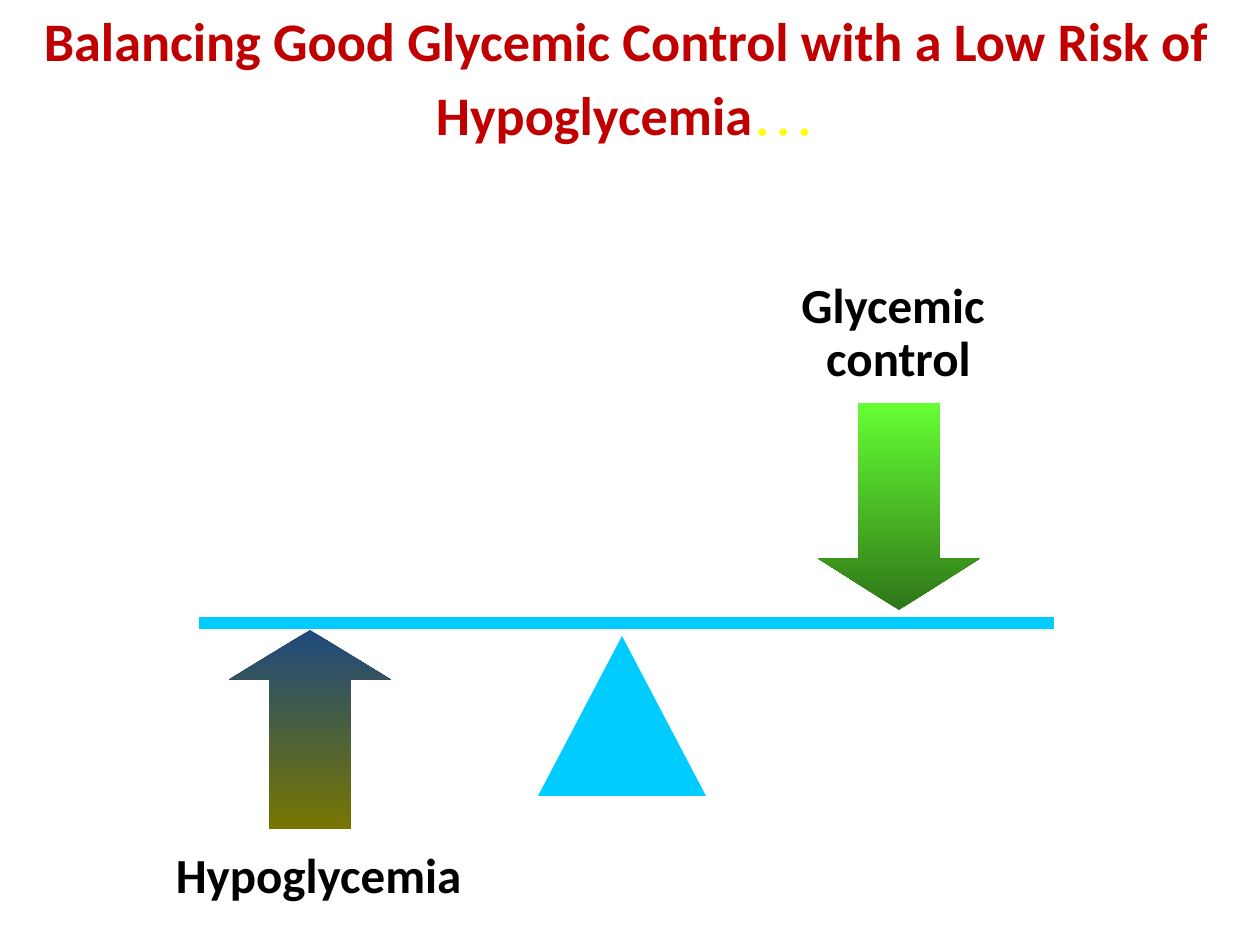
from pptx import Presentation
from pptx.dml.color import RGBColor
from pptx.enum.shapes import MSO_CONNECTOR, MSO_SHAPE
from pptx.enum.text import MSO_ANCHOR, PP_ALIGN
from pptx.oxml.ns import qn
from pptx.util import Pt
from lxml import etree

PX = 914400 // 126
CENTER = PP_ALIGN.CENTER
MIDDLE = MSO_ANCHOR.MIDDLE
UP_ARROW = MSO_SHAPE.UP_ARROW
TRIANGLE = MSO_SHAPE.ISOSCELES_TRIANGLE
STRAIGHT = MSO_CONNECTOR.STRAIGHT

RED = RGBColor(0xC0, 0x00, 0x00)
YELLOW = RGBColor(0xFF, 0xFF, 0x00)
BLACK = RGBColor(0x00, 0x00, 0x00)
CYAN = RGBColor(0x00, 0xCC, 0xFF)
NAVY = RGBColor(0x1F, 0x49, 0x7D)
OLIVE = RGBColor(0x76, 0x76, 0x00)
DARK_GREEN = RGBColor(0x2F, 0x76, 0x18)
LIME = RGBColor(0x66, 0xFF, 0x33)


def add_span(para, text, size, name, color, bold):
    span = para.add_run()
    span.text = text
    span.font.size = Pt(size)
    span.font.name = name
    span.font.color.rgb = color
    span.font.bold = bold


def add_figure(kind, left, top, width, height):
    figure = page.shapes.add_shape(kind, left * PX, top * PX, width * PX, height * PX)
    figure.shadow.inherit = False
    figure.line.fill.background()
    return figure


deck = Presentation()
deck.slide_width = 1260 * PX
deck.slide_height = 945 * PX
page = deck.slides.add_slide(deck.slide_layouts[5])

title = page.shapes.title
title.left, title.top, title.width, title.height = 15 * PX, 0, 1221 * PX, 155 * PX
title.text_frame.word_wrap = True
title.text_frame.vertical_anchor = MIDDLE
para = title.text_frame.paragraphs[0]
para.alignment = CENTER
add_span(para, "Balancing Good Glycemic Control with a Low Risk of Hypoglycemia", 31, "Calibri", RED, True)
add_span(para, "…", 36, "Times New Roman", YELLOW, False)

labels = [
    (["Hypoglycemia"], 105, 838, 427, 72, 1.0),
    (["Glycemic ", "control"], 640, 275, 517, 118, 0.9),
]
for lines, left, top, width, height, spacing in labels:
    box = page.shapes.add_textbox(left * PX, top * PX, width * PX, height * PX)
    box.text_frame.word_wrap = True
    para = box.text_frame.paragraphs[0]
    para.alignment = CENTER
    para.line_spacing = spacing
    for index, line in enumerate(lines):
        if index:
            para.add_line_break()
        add_span(para, line, 28, "Calibri", BLACK, True)

arrows = [
    (229, 630, 199, 0, 0.307, NAVY, OLIVE),
    (818, 403, 207, 180, 0.319, DARK_GREEN, LIME),
]
for left, top, height, rotation, head, start, end in arrows:
    arrow = add_figure(UP_ARROW, left, top, 162, height)
    arrow.rotation = rotation
    arrow.adjustments[0] = 0.5
    arrow.adjustments[1] = head
    arrow.fill.gradient()
    arrow.fill.gradient_angle = 270
    for stop, color in zip(arrow.fill.gradient_stops, (start, end)):
        stop.color.rgb = color

fulcrum = add_figure(TRIANGLE, 538, 636, 168, 160)
fulcrum.fill.solid()
fulcrum.fill.fore_color.rgb = CYAN

beam = page.shapes.add_connector(STRAIGHT, 199 * PX, 623 * PX, 1054 * PX, 623 * PX)
beam.line.color.rgb = CYAN
beam.line.width = Pt(7)
etree.SubElement(beam._element.spPr, qn("a:effectLst"))

deck.save("out.pptx")
